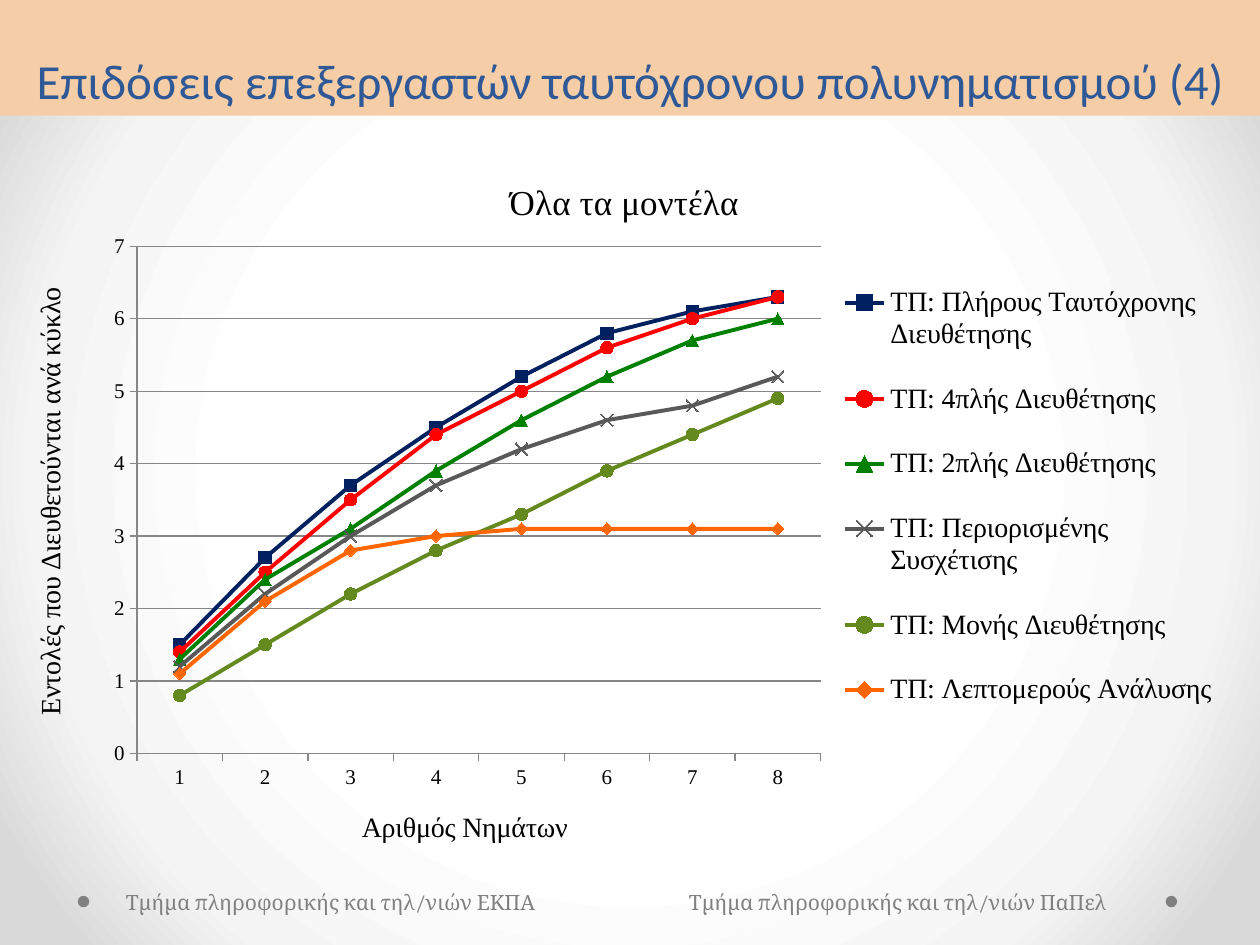
from lxml import etree
from pptx import Presentation
from pptx.chart.data import CategoryChartData
from pptx.dml.color import RGBColor
from pptx.enum.chart import XL_CHART_TYPE, XL_LEGEND_POSITION, XL_MARKER_STYLE, XL_TICK_MARK
from pptx.enum.shapes import MSO_SHAPE
from pptx.enum.text import MSO_ANCHOR, PP_ALIGN
from pptx.oxml import parse_xml
from pptx.oxml.ns import nsdecls, qn
from pptx.util import Cm, Pt

LINE = XL_CHART_TYPE.LINE_MARKERS
RIGHT = XL_LEGEND_POSITION.RIGHT
OUT = XL_TICK_MARK.OUTSIDE
SQUARE, CIRCLE = XL_MARKER_STYLE.SQUARE, XL_MARKER_STYLE.CIRCLE
WEDGE, CROSS = XL_MARKER_STYLE.TRIANGLE, XL_MARKER_STYLE.X
GEM = XL_MARKER_STYLE.DIAMOND
OVAL = MSO_SHAPE.OVAL
LOW, MID = MSO_ANCHOR.BOTTOM, PP_ALIGN.CENTER
SERIF = "Times New Roman"
HEX = {
    "band": "F5CEA7", "title": "2F5897", "foot": "808080", "text": "000000",
    "grid": "868686", "navy": "002060", "red": "FF0000", "green": "008000",
    "gray": "595959", "olive": "63891F", "orange": "FF6600",
}
RGB = {name: RGBColor.from_string(code) for name, code in HEX.items()}


def style(font, face, size, color):
    font.name, font.size, font.bold = face, Pt(size), False
    font.color.rgb = RGB[color]


def place(node, index, **spots):
    for old in node.findall(qn("c:layout")):
        node.remove(old)
    layout = etree.Element(qn("c:layout"))
    manual = etree.SubElement(layout, qn("c:manualLayout"))
    if "w" in spots and index == 0:
        etree.SubElement(manual, qn("c:layoutTarget")).set("val", "inner")
    for key in "xy":
        etree.SubElement(manual, qn(f"c:{key}Mode")).set("val", "edge")
    for key, val in spots.items():
        etree.SubElement(manual, qn(f"c:{key}")).set("val", str(val))
    node.insert(index, layout)


deck = Presentation()
deck.slide_width, deck.slide_height = Cm(25.4), Cm(19.05)
slide = deck.slides.add_slide(deck.slide_layouts[5])
shapes = slide.shapes

slide.background.fill.solid()
back = slide.background.fill
back.fore_color.rgb = RGBColor(255, 255, 255)
stops = "".join(
    f'<a:gs pos="{pos}000"><a:srgbClr val="{code}"/></a:gs>'
    for pos, code in ((50, "FFFFFF"), (76, "F4F4F4"), (92, "DADADA"))
)
grad = parse_xml(
    f'<a:gradFill {nsdecls("a")} rotWithShape="1"><a:gsLst>{stops}</a:gsLst>'
    '<a:path path="circle"><a:fillToRect l="50000" t="50000" r="50000" b="50000"/>'
    "</a:path></a:gradFill>"
)
solid = slide.element.find(".//" + qn("p:bgPr")).find(qn("a:solidFill"))
solid.getparent().replace(solid, grad)

for left in (23.5, 1.57):
    dot = shapes.add_shape(OVAL, Cm(left), Cm(18.06), Cm(0.23), Cm(0.23))
    dot.shadow.inherit = False
    dot.fill.solid()
    dot.fill.fore_color.rgb = RGB["foot"]
    dot.line.fill.background()

for left, width, words in (
    (2.29, 10.01, "Τμήμα πληροφορικής και τηλ/νιών ΕΚΠΑ"),
    (13.64, 9.09, "Τμήμα πληροφορικής και τηλ/νιών ΠαΠελ"),
):
    frame = shapes.add_textbox(Cm(left), Cm(17.81), Cm(width), Cm(0.76)).text_frame
    frame.word_wrap = True
    frame.text = words
    style(frame.paragraphs[0].font, "Cambria", 12, "foot")

title = shapes.title
title.left, title.top, title.width, title.height = Cm(0), Cm(0), Cm(25.4), Cm(2.33)
title.fill.solid()
title.fill.fore_color.rgb = RGB["band"]
title.text_frame.text = "Επιδόσεις επεξεργαστών ταυτόχρονου πολυνηματισμού (4)"
title.text_frame.vertical_anchor = LOW
para = title.text_frame.paragraphs[0]
para.alignment, para.line_spacing = MID, Pt(58)
style(para.font, "Calibri", 28, "title")

models = (
    ("Πλήρους Ταυτόχρονης Διευθέτησης", "navy", SQUARE, (1.5, 2.7, 3.7, 4.5, 5.2, 5.8, 6.1, 6.3)),
    ("4πλής Διευθέτησης", "red", CIRCLE, (1.4, 2.5, 3.5, 4.4, 5, 5.6, 6, 6.3)),
    ("2πλής Διευθέτησης", "green", WEDGE, (1.3, 2.4, 3.1, 3.9, 4.6, 5.2, 5.7, 6)),
    ("Περιορισμένης Συσχέτισης", "gray", CROSS, (1.2, 2.2, 3, 3.7, 4.2, 4.6, 4.8, 5.2)),
    ("Μονής Διευθέτησης", "olive", CIRCLE, (0.8, 1.5, 2.2, 2.8, 3.3, 3.9, 4.4, 4.9)),
    ("Λεπτομερούς Ανάλυσης", "orange", GEM, (1.1, 2.1, 2.8, 3, 3.1, 3.1, 3.1, 3.1)),
)
data = CategoryChartData()
data.categories = [str(n) for n in range(1, 9)]
for name, color, mark, vals in models:
    data.add_series(f"ΤΠ: {name}", vals)
chart = shapes.add_chart(LINE, Cm(0.3), Cm(2.92), Cm(24.61), Cm(14.61), data).chart
style(chart.font, "Cambria", 10, "text")

for series, (name, color, mark, vals) in zip(chart.plots[0].series, models):
    series.smooth = False
    series.format.line.width = Pt(2.25)
    series.format.line.color.rgb = RGB[color]
    series.marker.style, series.marker.size = mark, 7
    series.marker.format.fill.solid()
    series.marker.format.fill.fore_color.rgb = RGB[color]
    series.marker.format.line.color.rgb = RGB[color]
chart.plots[0].vary_by_categories = False

across, up = chart.category_axis, chart.value_axis
up.minimum_scale, up.maximum_scale, up.major_unit = 0, 7, 1
up.has_major_gridlines = True
up.major_gridlines.format.line.color.rgb = RGB["grid"]
for axis in (across, up):
    axis.major_tick_mark = OUT
    axis.format.line.color.rgb = RGB["grid"]
    style(axis.tick_labels.font, SERIF, 12, "text")

for owner, words, size, x, y in (
    (chart, "Όλα τα μοντέλα", 20, 0.4, 0.04),
    (across, "Αριθμός Νημάτων", 16, 0.28, 0.91),
    (up, "Εντολές που Διευθετούνται ανά κύκλο", 16, 0.01, 0.19),
):
    owner.has_title = True
    head = owner.chart_title if owner is chart else owner.axis_title
    head.text_frame.text = words
    style(head.text_frame.paragraphs[0].font, SERIF, size, "text")
    node = head.text_frame._txBody.getparent().getparent()
    place(node, 1, x=x, y=y)

chart.has_legend = True
legend = chart.legend
legend.position, legend.include_in_layout = RIGHT, False
style(legend.font, SERIF, 16, "text")
root = chart.element
place(root.find(".//" + qn("c:legend")), 1, x=0.67, y=0.15, w=0.32, h=0.67)
place(root.find(".//" + qn("c:plotArea")), 0, x=0.1, y=0.14, w=0.56, h=0.7)

deck.save("out.pptx")
